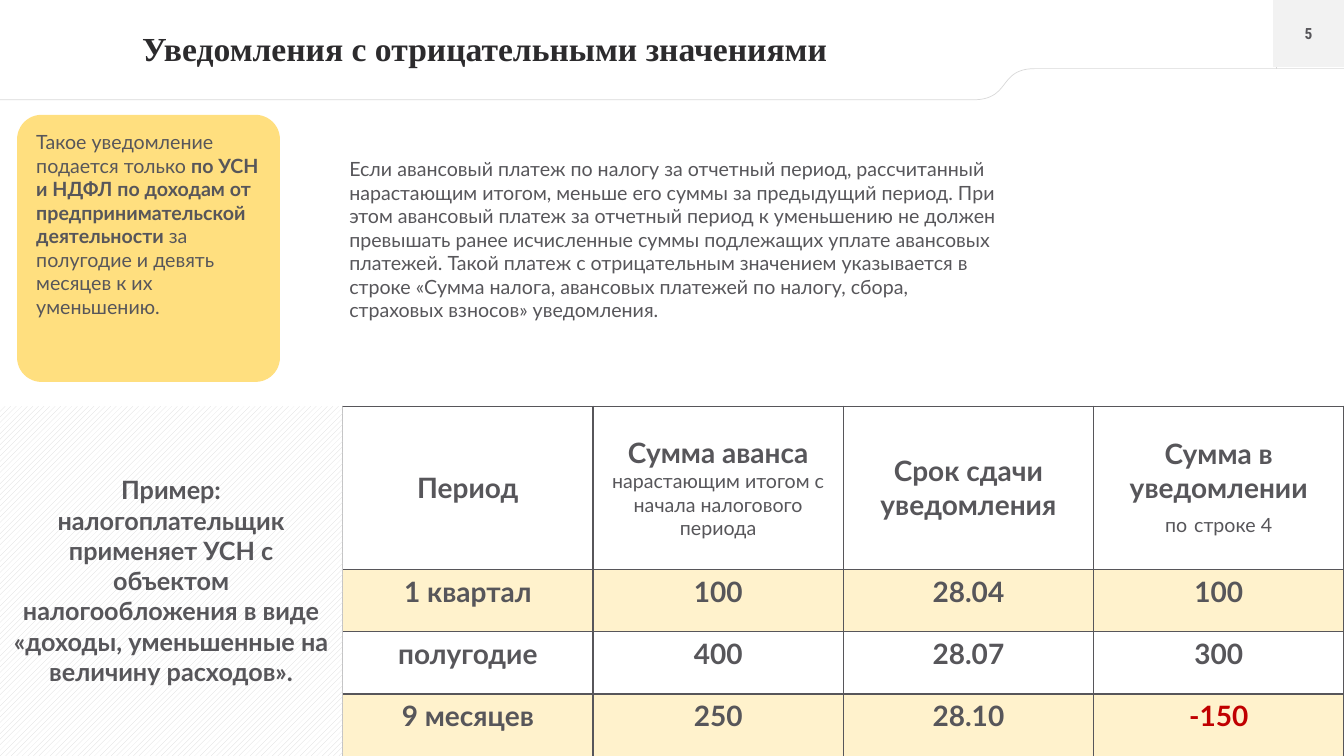
import lxml.etree
import pptx
import pptx.dml.color
import pptx.enum.dml
import pptx.enum.shapes
import pptx.enum.text
import pptx.oxml.ns
import pptx.util

Pt = pptx.util.Pt
qn = pptx.oxml.ns.qn
Align = pptx.enum.text.PP_ALIGN
Anchor = pptx.enum.text.MSO_ANCHOR
Shape = pptx.enum.shapes.MSO_SHAPE
GRAY, RULE, GOLD, RED = "57565A", "D9D9D9", "FFC000", "C00000"


def color(code):
    return pptx.dml.color.RGBColor.from_string(code)


def write(frame, paras, align=Align.LEFT, anchor=Anchor.TOP, inset=(7.2, 3.6), **base):
    frame.word_wrap = True
    frame.vertical_anchor = anchor
    frame.margin_left = frame.margin_right = Pt(inset[0])
    frame.margin_top = frame.margin_bottom = Pt(inset[1])
    for i, runs in enumerate(paras):
        para = frame.add_paragraph() if i else frame.paragraphs[0]
        para.alignment = align
        for text, extra in runs:
            look = {"font": "Lato", "size": 14, "bold": False, "ink": GRAY, **base, **extra}
            run = para.add_run()
            run.text = text
            run.font.name = look["font"]
            run.font.size = Pt(look["size"])
            run.font.bold = look["bold"]
            run.font.color.rgb = color(look["ink"])


def fade(node, share):
    tint = node.find(".//" + qn("a:srgbClr"))
    lxml.etree.SubElement(tint, qn("a:alpha"), val=str(share * 1000))


class Page:
    """Holds the deck, the current slide and its drawing style."""

    def __init__(self):
        self.deck = pptx.Presentation()
        self.deck.slide_width, self.deck.slide_height = Pt(960), Pt(540)
        self.slide = self.deck.slides.add_slide(self.deck.slide_layouts[5])
        self.shapes = self.slide.shapes

    def title(self, text, *box):
        head = self.shapes.title
        head.left, head.top, head.width, head.height = map(Pt, box)
        write(head.text_frame, [[(text, {})]], align=Align.JUSTIFY,
              font="Times New Roman", size=24, bold=True, ink="2C2B2D")
        head.text_frame.auto_size = pptx.enum.text.MSO_AUTO_SIZE.NONE

    def line(self, *ends):
        rule = self.shapes.add_connector(
            pptx.enum.shapes.MSO_CONNECTOR.STRAIGHT, *map(Pt, ends))
        rule.line.color.rgb = color(RULE)
        rule.line.width = Pt(0.5)
        lxml.etree.SubElement(rule._element.spPr, qn("a:effectLst"))

    def swoosh(self, start, knots, end, steps=24):
        spots = []
        for i in range(steps + 1):
            t = i / steps
            mix = ((1 - t) ** 3, 3 * t * (1 - t) ** 2, 3 * t * t * (1 - t), t ** 3)
            spots.append([Pt(sum(m * k[axis] for m, k in zip(mix, knots))) for axis in (0, 1)])
        pen = self.shapes.build_freeform(*map(Pt, start))
        pen.add_line_segments(spots + [[Pt(v) for v in end]], close=False)
        curve = pen.convert_to_shape()
        curve.shadow.inherit = False
        curve.fill.background()
        curve.line.color.rgb = color(RULE)
        curve.line.width = Pt(0.5)

    def block(self, kind, box, fill, alpha=100):
        block = self.shapes.add_shape(kind, *map(Pt, box))
        block.shadow.inherit = False
        block.line.fill.background()
        block.fill.solid()
        block.fill.fore_color.rgb = color(fill)
        if alpha < 100:
            fade(block._element.spPr, alpha)
        return block

    def hatch(self, box):
        fill = self.block(Shape.RECTANGLE, box, "FFFFFF").fill
        fill.patterned()
        fill.pattern = pptx.enum.dml.MSO_PATTERN.WIDE_UPWARD_DIAGONAL
        fill.fore_color.rgb = color(RULE)
        fill.back_color.rgb = color("FFFFFF")

    def text(self, box, paras, **look):
        write(self.shapes.add_textbox(*map(Pt, box)).text_frame, paras, **look)

    def cell(self, cell, paras, tint, anchor):
        write(cell.text_frame, paras, align=Align.CENTER, size=20, bold=True)
        cell.vertical_anchor = anchor
        if tint:
            cell.fill.solid()
            cell.fill.fore_color.rgb = color(GOLD)
            fade(cell._tc.tcPr, 20)
        else:
            cell.fill.background()
        for i, side in enumerate(("lnL", "lnR", "lnT", "lnB")):
            edge = lxml.etree.Element(qn("a:" + side), w=str(Pt(1)))
            ink = lxml.etree.SubElement(edge, qn("a:solidFill"))
            lxml.etree.SubElement(ink, qn("a:srgbClr"), val=GRAY)
            cell._tc.tcPr.insert(i, edge)

    def table(self, box, highs, rows):
        grid = self.shapes.add_table(len(rows), len(rows[0]), *map(Pt, box)).table
        grid.first_row = grid.horz_banding = False
        for r, row in enumerate(rows):
            grid.rows[r].height = Pt(highs[r])
            for c, paras in enumerate(row):
                self.cell(grid.cell(r, c), paras, r % 2 == 1,
                          Anchor.TOP if r else Anchor.MIDDLE)


def main():
    page = Page()
    page.line(911.5, 0, 911.5, 49)
    page.swoosh((960, 49), [(739.4, 49), (712, 49), (723, 72), (693.4, 71.3)], (0, 71.3))
    badge = page.block(Shape.RECTANGLE, (909.5, 0, 50.5, 47.8), "F2F2F2")
    write(badge.text_frame, [[("5", {})]], align=Align.CENTER, anchor=Anchor.MIDDLE,
          inset=(0, 0), font="Roboto Condensed", size=11, bold=True)

    note = {"size": 14, "bold": False}
    heads = [
        [[("Период", {})]],
        [[("Сумма аванса", {})],
         [("нарастающим итогом с начала налогового периода", note)]],
        [[("Срок сдачи уведомления", {})]],
        [[("Сумма в уведомлении", {})],
         [("по", note), (" ", {}), ("строке 4", note)]],
    ]
    data = [("1 квартал", "100", "28.04", "100"),
            ("полугодие", "400", "28.07", "300"),
            ("9 месяцев", "250", "28.10", "-150")]
    rows = [[[[(v, {"ink": RED} if v.startswith("-") else {})]] for v in row] for row in data]
    page.table((244.8, 290.2, 715.2, 250), (116.4, 44.6, 44.6, 44.6), [heads] + rows)

    page.title("Уведомления с отрицательными значениями", 94.3, 16.6, 751, 36)
    page.text((242.4, 108.7, 480, 126), [[(
        "Если авансовый платеж по налогу за отчетный период, рассчитанный нарастающим "
        "итогом, меньше его суммы за предыдущий период. При этом авансовый платеж за "
        "отчетный период к уменьшению не должен превышать ранее исчисленные суммы "
        "подлежащих уплате авансовых платежей. Такой платеж с отрицательным значением "
        "указывается в строке «Сумма налога, авансовых платежей по налогу, сбора, "
        "страховых взносов» уведомления.", {})]])

    page.hatch((0, 290.2, 244.8, 249.8))
    page.text((2.2, 335.5, 240, 160), [
        [("Пример: налогоплательщик", {})],
        [("применяет УСН с объектом налогообложения в виде "
          "«доходы, уменьшенные на величину расходов».", {})],
    ], align=Align.CENTER, size=18, bold=True)

    card = page.block(Shape.ROUNDED_RECTANGLE, (12.2, 82, 187.8, 190.8), GOLD, 50)
    card.adjustments[0] = 0.093
    write(card.text_frame, [[
        ("Такое уведомление подается только ", {}),
        ("по УСН и НДФЛ по доходам от предпринимательской деятельности ", {"bold": True}),
        ("за полугодие и девять месяцев к их уменьшению.", {}),
    ]], inset=(8.6, 5.8))
    page.deck.save("out.pptx")


if __name__ == "__main__":
    main()
